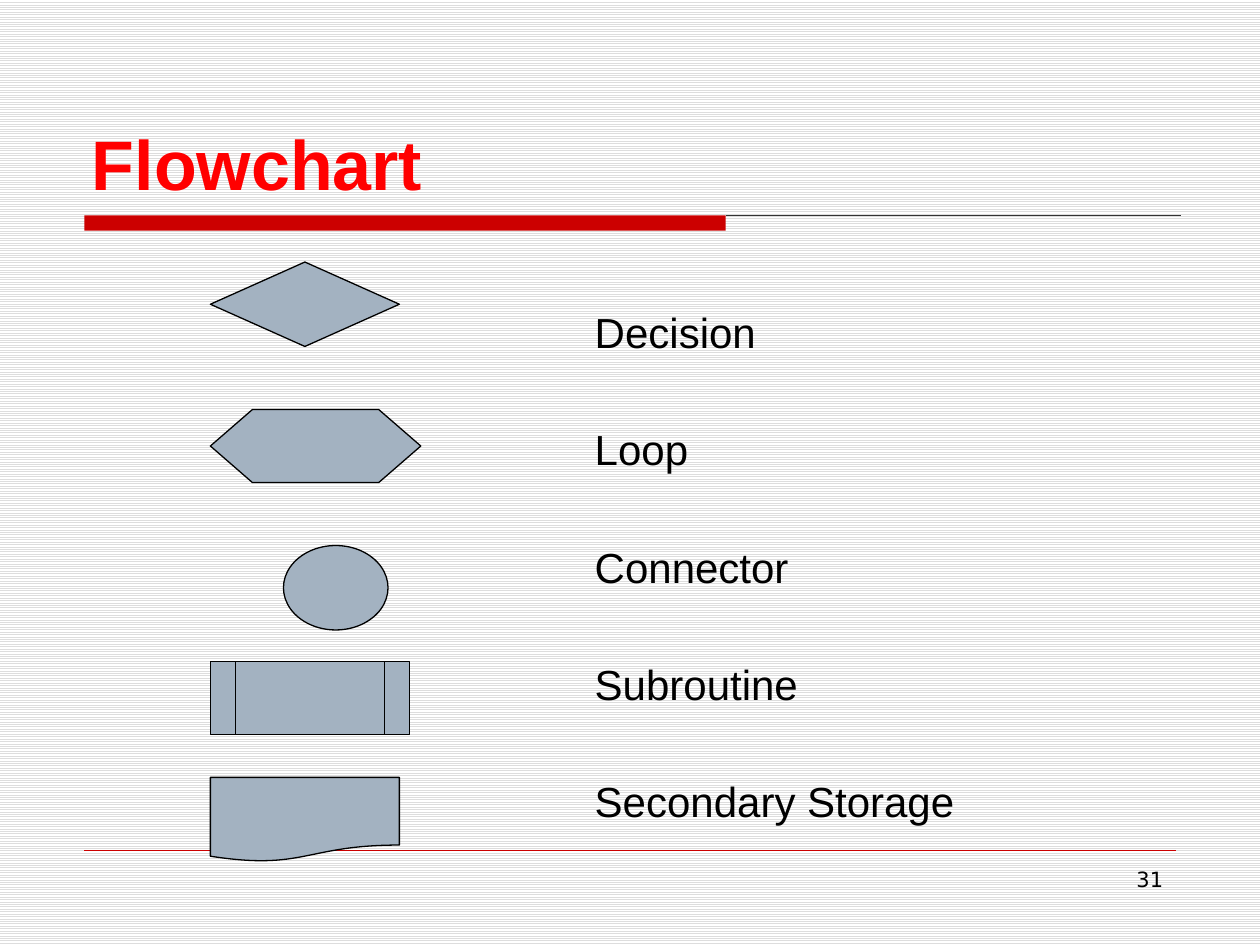
"""Build a slide that names five flowchart symbols."""
import pptx
import pptx.util
import pptx.dml.color
import pptx.enum.dml
import pptx.enum.shapes
import pptx.enum.text
import pptx.oxml.ns
import lxml.etree

Inches, Pt = pptx.util.Inches, pptx.util.Pt
RGB = pptx.dml.color.RGBColor.from_string
SHAPE = pptx.enum.shapes.MSO_SHAPE
ALIGN = pptx.enum.text.PP_ALIGN
ANCHOR = pptx.enum.text.MSO_ANCHOR
qn = pptx.oxml.ns.qn

COLORS = {"title": "FF0000", "accent": "CC0000", "rule": "333333", "text": "000000",
          "symbol": "A3B2C1", "stripe": "DDDDDD", "paper": "FFFFFF"}


def place(sp, left, top, width, height):
    sp.left, sp.top = Inches(left), Inches(top)
    sp.width, sp.height = Inches(width), Inches(height)


def style(p, size, font, color, bold=False):
    for r in p.runs:
        r.font.size, r.font.name, r.font.bold = Pt(size), font, bold
        r.font.color.rgb = RGB(COLORS[color])


prs = pptx.Presentation()
prs.slide_width, prs.slide_height = Inches(10), Inches(7.5)
s = prs.slides.add_slide(prs.slide_layouts[1])

bg = s.background.fill
bg.patterned()
bg.pattern = pptx.enum.dml.MSO_PATTERN.LIGHT_HORIZONTAL
bg.fore_color.rgb = RGB(COLORS["stripe"])
bg.back_color.rgb = RGB(COLORS["paper"])

title, body = s.placeholders
place(title, 0.63, 0.34, 8.75, 1.33)
tf = title.text_frame
tf.text = "Flowchart"
tf.auto_size = pptx.enum.text.MSO_AUTO_SIZE.NONE
tf.vertical_anchor = ANCHOR.BOTTOM
tf.paragraphs[0].alignment = ALIGN.LEFT
style(tf.paragraphs[0], 40, "Arial", "title", True)

bar = s.shapes.add_shape(SHAPE.RECTANGLE, Inches(0.67), Inches(1.71), Inches(5.09), Inches(0.12))
bar.shadow.inherit = False
bar.fill.solid()
bar.fill.fore_color.rgb = RGB(COLORS["accent"])
bar.line.fill.background()

for left, right, y, width, color in [(5.76, 9.37, 1.71, 0.75, "rule"),
                                     (0.67, 9.33, 6.75, 0.25, "accent")]:
    rule = s.shapes.add_connector(pptx.enum.shapes.MSO_CONNECTOR.STRAIGHT,
                                  Inches(left), Inches(y), Inches(right), Inches(y))
    rule.line.width = Pt(width)
    rule.line.color.rgb = RGB(COLORS[color])
    lxml.etree.SubElement(rule._element.spPr, qn("a:effectLst"))

symbols = [
    ("Decision", SHAPE.FLOWCHART_DECISION, 1.67, 2.08, 1.5, 0.67),
    ("Loop", SHAPE.FLOWCHART_PREPARATION, 1.67, 3.25, 1.67, 0.58),
    ("Connector", SHAPE.FLOWCHART_CONNECTOR, 2.25, 4.33, 0.83, 0.67),
    ("Subroutine", SHAPE.FLOWCHART_PREDEFINED_PROCESS, 1.67, 5.25, 1.58, 0.58),
    ("Secondary Storage", SHAPE.FLOWCHART_DOCUMENT, 1.67, 6.17, 1.5, 0.67),
]

place(body, 0.62, 1.92, 8.75, 4.67)
tf = body.text_frame
tf.text = "\n".join(symbol[0] for symbol in symbols)
tf.auto_size = pptx.enum.text.MSO_AUTO_SIZE.NONE
tf.vertical_anchor = ANCHOR.TOP
tf.margin_top = Inches(0.51)
for p in tf.paragraphs:
    p.alignment = ALIGN.JUSTIFY
    p.space_before, p.space_after = Pt(0), Pt(38.3)
    pPr = p._p.get_or_add_pPr()
    pPr.set("marL", str(Inches(4)))
    pPr.set("indent", "0")
    lxml.etree.SubElement(pPr, qn("a:buNone"))
    style(p, 24, "Arial", "text")
p.space_after = Pt(0)

for name, kind, left, top, width, height in symbols:
    sp = s.shapes.add_shape(kind, Inches(left), Inches(top), Inches(width), Inches(height))
    sp.shadow.inherit = False
    sp.fill.solid()
    sp.fill.fore_color.rgb = RGB(COLORS["symbol"])
    sp.line.color.rgb = RGB(COLORS["text"])
    sp.line.width = Pt(0.75)

number = s.shapes.add_textbox(Inches(7.16), Inches(6.83), Inches(2.17), Inches(0.52))
tf = number.text_frame
tf.word_wrap = True
tf.text = "31"
tf.paragraphs[0].alignment = ALIGN.RIGHT
style(tf.paragraphs[0], 12, "DejaVu Sans", "text")

prs.save("out.pptx")
